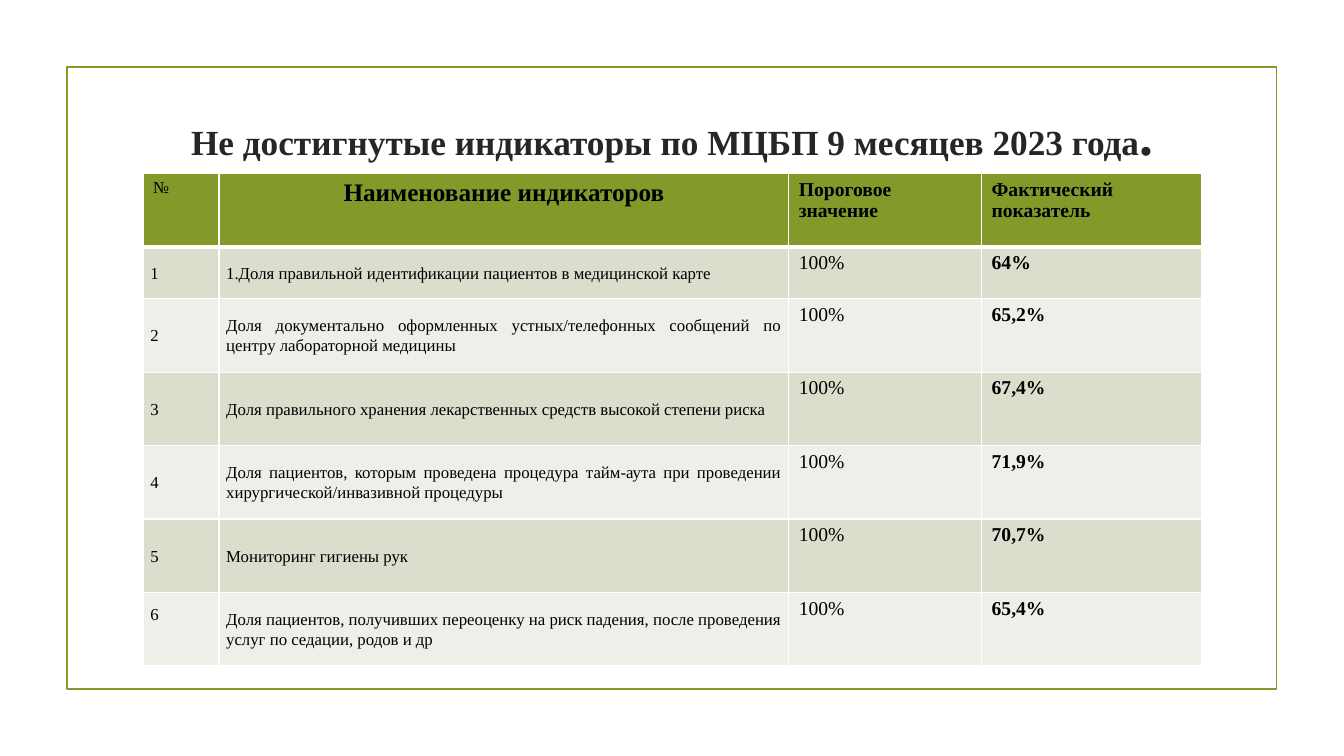
from lxml import etree
from pptx import Presentation
from pptx.dml.color import RGBColor
from pptx.enum.shapes import MSO_SHAPE
from pptx.enum.text import MSO_ANCHOR, PP_ALIGN
from pptx.oxml.ns import qn
from pptx.util import Cm, Pt

COLORS = {"green": "83992A", "odd": "D9DECD", "even": "EDEFE8",
          "title": "262626", "text": "000000", "border": "FFFFFF"}

HEADERS = [("№", 12, False, PP_ALIGN.LEFT),
           ("Наименование индикаторов", 18, True, PP_ALIGN.CENTER),
           ("Пороговое значение", 14, True, PP_ALIGN.LEFT),
           ("Фактический показатель", 14, True, PP_ALIGN.LEFT)]

INDICATORS = [
    ("1.Доля правильной идентификации пациентов в медицинской карте", "64%"),
    ("Доля документально оформленных устных/телефонных сообщений по центру лабораторной медицины", "65,2%"),
    ("Доля правильного хранения лекарственных средств высокой степени риска", "67,4%"),
    ("Доля пациентов, которым проведена процедура тайм-аута при проведении хирургической/инвазивной процедуры", "71,9%"),
    ("Мониторинг гигиены рук", "70,7%"),
    ("Доля пациентов, получивших переоценку на риск падения, после проведения услуг по седации, родов и др", "65,4%"),
]


class SlideBuilder:
    """Holds the slide and its style and adds each kind of element."""

    def __init__(self, slide, font="Times New Roman"):
        self.slide = slide
        self.font = font

    def color(self, name):
        return RGBColor.from_string(COLORS[name])

    def run(self, p, text, size, bold=False, color="text"):
        r = p.add_run()
        r.text = text
        r.font.name = self.font
        r.font.size = Pt(size)
        r.font.bold = bold
        r.font.color.rgb = self.color(color)

    def frame(self, left, top, width, height):
        sp = self.slide.shapes.add_shape(
            MSO_SHAPE.RECTANGLE, Cm(left), Cm(top), Cm(width), Cm(height))
        sp.shadow.inherit = False
        sp.fill.background()
        sp.line.color.rgb = self.color("green")
        sp.line.width = Pt(1.25)

    def title(self, left, top, width, height, runs):
        sp = self.slide.shapes.add_textbox(Cm(left), Cm(top), Cm(width), Cm(height))
        tf = sp.text_frame
        tf.word_wrap = True
        tf.vertical_anchor = MSO_ANCHOR.MIDDLE
        p = tf.paragraphs[0]
        p.alignment = PP_ALIGN.CENTER
        for text, size in runs:
            self.run(p, text, size, True, "title")

    def table(self, left, top, widths, heights):
        sp = self.slide.shapes.add_table(
            len(heights), len(widths), Cm(left), Cm(top), Cm(sum(widths)), Cm(sum(heights)))
        table = sp.table
        table.first_row = False
        table.horz_banding = False
        for column, width in zip(table.columns, widths):
            column.width = Cm(width)
        for row, height in zip(table.rows, heights):
            row.height = Cm(height)
        return table

    def borders(self, cell, top, bottom):
        tc_pr = cell._tc.get_or_add_tcPr()
        for side, width in (("L", 1), ("R", 1), ("T", top), ("B", bottom)):
            ln = etree.SubElement(tc_pr, qn(f"a:ln{side}"), w=str(Pt(width)))
            fill = etree.SubElement(ln, qn("a:solidFill"))
            etree.SubElement(fill, qn("a:srgbClr"), val=COLORS["border"])

    def cell(self, cell, text, size, fill, bold=False, align=PP_ALIGN.LEFT,
             compact=False, top=1, bottom=1):
        self.borders(cell, top, bottom)
        cell.fill.solid()
        cell.fill.fore_color.rgb = self.color(fill)
        cell.margin_left = cell.margin_right = Cm(0.18 if compact else 0.25)
        cell.margin_top = cell.margin_bottom = Cm(0 if compact else 0.13)
        cell.vertical_anchor = MSO_ANCHOR.MIDDLE if compact else MSO_ANCHOR.TOP
        p = cell.text_frame.paragraphs[0]
        p.alignment = align
        if compact:
            p.line_spacing = 1.07
            p.space_after = Pt(8)
        self.run(p, text, size, bold)


def main():
    prs = Presentation()
    prs.slide_width, prs.slide_height = Cm(33.87), Cm(19.05)
    s = SlideBuilder(prs.slides.add_slide(prs.slide_layouts[6]))

    s.frame(1.69, 1.69, 30.48, 15.68)
    s.title(3.61, 2.8, 26.67, 1.14, [
        ("Не достигнутые индикаторы по МЦБП 9 месяцев 2023 года", 25.2), (".", 39.6)])

    table = s.table(3.61, 4.37, [1.91, 14.36, 4.86, 5.54], [1.85, 1.31] + [1.85] * 5)
    for col, (text, size, bold, align) in enumerate(HEADERS):
        s.cell(table.cell(0, col), text, size, "green", bold, align, bottom=3)
    for row, (name, actual) in enumerate(INDICATORS, 1):
        fill = "odd" if row % 2 else "even"
        top = 3 if row == 1 else 1
        for col, text in enumerate((str(row), name)):
            s.cell(table.cell(row, col), text, 12, fill,
                   align=PP_ALIGN.JUSTIFY, compact=True, top=top)
        s.cell(table.cell(row, 2), "100%", 14, fill, top=top)
        s.cell(table.cell(row, 3), actual, 14, fill, bold=True, top=top)
    table.cell(len(INDICATORS), 0).margin_bottom = Cm(0.76)

    prs.save("out.pptx")


if __name__ == "__main__":
    main()
